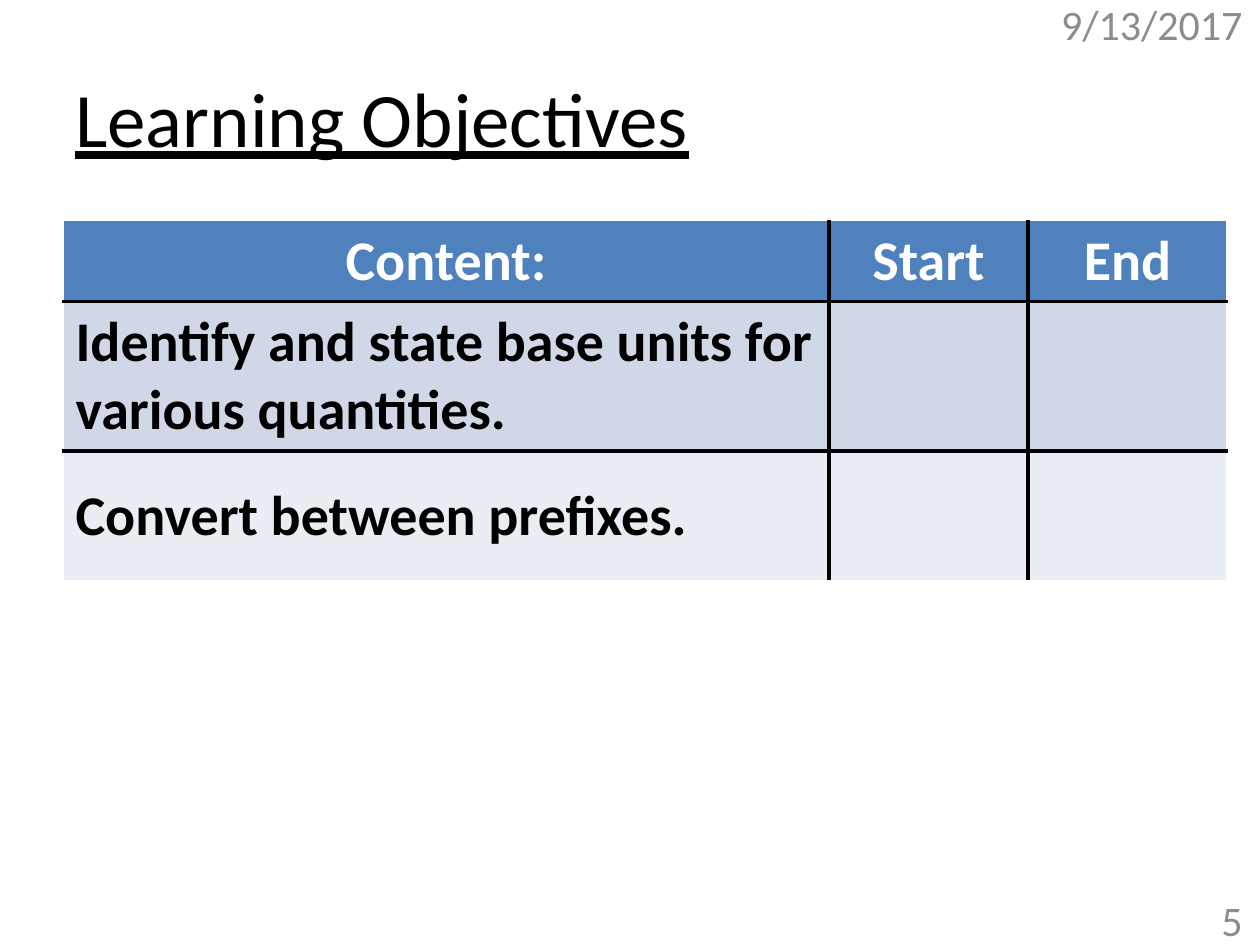
import dataclasses

import pptx
import pptx.dml.color
import pptx.enum.text
import pptx.oxml
import pptx.oxml.ns
import pptx.util

Inches = pptx.util.Inches
Align = pptx.enum.text.PP_ALIGN
Anchor = pptx.enum.text.MSO_ANCHOR


@dataclasses.dataclass
class Label:
    text: str
    left: float
    top: float
    width: float
    height: float
    size: int
    color: str
    align: Align = Align.RIGHT
    underline: bool = False


@dataclasses.dataclass
class TableRow:
    texts: tuple[str, str, str]
    height: float
    fill: str
    color: str
    align: Align


LABELS = [
    Label("Learning Objectives", 0.5, 0.3, 9, 1.25, 44, "000000", Align.LEFT, True),
    Label("9/13/2017", 8.25, -0.01, 1.71, 0.4, 24, "8C8C8C"),
    Label("5", 9.29, 7.1, 0.67, 0.4, 24, "8C8C8C"),
]
COLUMN_WIDTHS = [6.08, 1.58, 1.58]
ROWS = [
    TableRow(("Content:", "Start", "End"), 0.5, "4F81BD", "FFFFFF", Align.CENTER),
    TableRow(
        ("Identify and state base units for various quantities.", "", ""),
        1.03, "D0D8E8", "000000", Align.LEFT,
    ),
    TableRow(("Convert between prefixes.", "", ""), 1.03, "E9EDF4", "000000", Align.LEFT),
]


def rgb(value: str) -> pptx.dml.color.RGBColor:
    return pptx.dml.color.RGBColor.from_string(value)


def write_text(frame, text: str, *, size: int, color: str, align: Align,
               bold: bool = False, underline: bool = False) -> None:
    para = frame.paragraphs[0]
    para.alignment = align
    span = para.add_run()
    span.text = text
    span.font.name = "Calibri"
    span.font.size = pptx.util.Pt(size)
    span.font.bold = bold
    span.font.underline = underline
    span.font.color.rgb = rgb(color)


def draw_label(page, label: Label) -> None:
    box = page.shapes.add_textbox(
        Inches(label.left), Inches(label.top), Inches(label.width), Inches(label.height)
    )
    frame = box.text_frame
    frame.word_wrap = True
    frame.vertical_anchor = Anchor.MIDDLE
    write_text(frame, label.text, size=label.size, color=label.color,
               align=label.align, underline=label.underline)


def set_borders(cell, outer_sides: dict[str, bool]) -> None:
    properties = cell._tc.get_or_add_tcPr()
    for index, (side, outer) in enumerate(outer_sides.items()):
        color, width = ("FFFFFF", 1) if outer else ("000000", 2.25)
        line = pptx.oxml.parse_xml(
            f'<a:{side} {pptx.oxml.ns.nsdecls("a")} w="{pptx.util.Pt(width)}">'
            f'<a:solidFill><a:srgbClr val="{color}"/></a:solidFill></a:{side}>'
        )
        properties.insert(index, line)


def draw_table(page, rows: list[TableRow], widths: list[float]) -> None:
    table = page.shapes.add_table(
        len(rows), len(widths), Inches(0.5), Inches(1.75),
        Inches(sum(widths)), Inches(sum(row.height for row in rows)),
    ).table
    for column, width in zip(table.columns, widths):
        column.width = Inches(width)
    for row_index, row in enumerate(rows):
        table.rows[row_index].height = Inches(row.height)
        for column_index, text in enumerate(row.texts):
            cell = table.cell(row_index, column_index)
            cell.fill.solid()
            cell.fill.fore_color.rgb = rgb(row.fill)
            cell.vertical_anchor = Anchor.MIDDLE
            set_borders(cell, {
                "lnL": column_index == 0,
                "lnR": column_index == len(widths) - 1,
                "lnT": row_index == 0,
                "lnB": row_index == len(rows) - 1,
            })
            if text:
                write_text(cell.text_frame, text, size=32, color=row.color,
                           align=row.align, bold=True)


def main() -> None:
    deck = pptx.Presentation()
    deck.slide_width = Inches(10)
    deck.slide_height = Inches(7.5)
    page = deck.slides.add_slide(deck.slide_layouts[6])
    draw_table(page, ROWS, COLUMN_WIDTHS)
    for label in LABELS:
        draw_label(page, label)
    deck.save("out.pptx")


if __name__ == "__main__":
    main()
